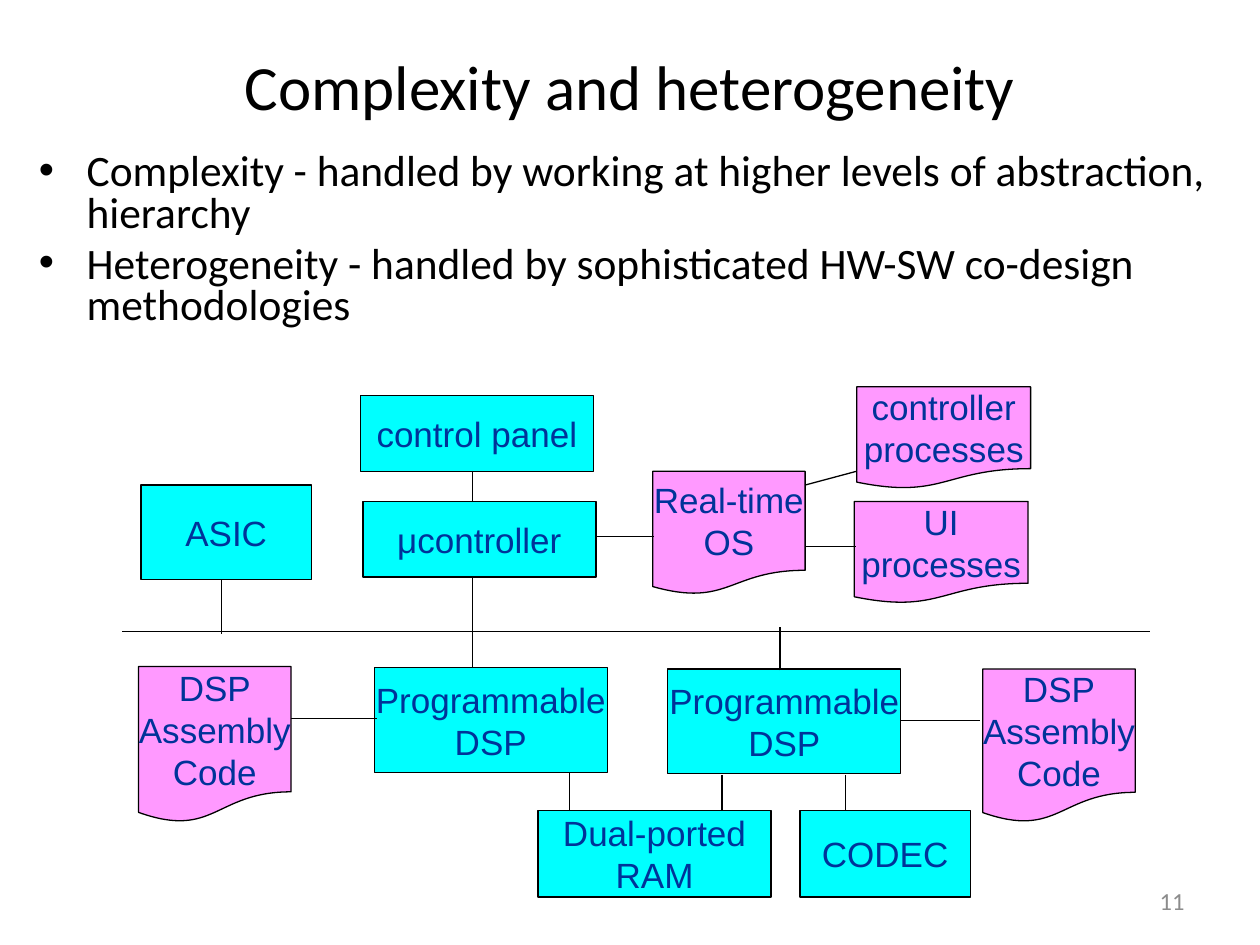
from lxml.etree import SubElement
from pptx import Presentation
from pptx.dml.color import RGBColor
from pptx.enum.shapes import MSO_CONNECTOR as Conn, MSO_SHAPE as Shape
from pptx.enum.text import MSO_ANCHOR as Anchor, PP_ALIGN as Align
from pptx.oxml.ns import qn
from pptx.util import Inches, Pt

BLACK = RGBColor(0x00, 0x00, 0x00)
GRAY = RGBColor(0x8C, 0x8C, 0x8C)
NAVY = RGBColor(0x00, 0x33, 0x99)
CYAN = RGBColor(0x00, 0xFF, 0xFF)
PINK = RGBColor(0xFF, 0x99, 0xFF)

HARD = (Shape.RECTANGLE, CYAN)
SOFT = (Shape.FLOWCHART_DOCUMENT, PINK)

TRUNKS = [(2.78, 0.67, 2.78, 2.25), (0, 1.94, 8.16, 1.94)]
NODES = [
    (HARD, "μcontroller", 1.91, 0.91, 1.85, 0.6),
    (HARD, "control panel", 1.89, 0.07, 1.85, 0.6),
    (SOFT, "Real-time\nOS", 4.21, 0.67, 1.21, 0.98),
    (SOFT, "controller\nprocesses", 5.83, 0, 1.38, 0.81),
    (SOFT, "UI\nprocesses", 5.81, 0.91, 1.38, 0.81),
    (HARD, "ASIC", 0.15, 0.78, 1.35, 0.75),
    (HARD, "Programmable\nDSP", 2, 2.23, 1.85, 0.83),
    (HARD, "Programmable\nDSP", 4.33, 2.24, 1.85, 0.83),
    (SOFT, "DSP\nAssembly\nCode", 0.13, 2.22, 1.21, 1.24),
    (SOFT, "DSP\nAssembly\nCode", 6.83, 2.24, 1.21, 1.22),
    (HARD, "Dual-ported\nRAM", 3.3, 3.36, 1.85, 0.69),
    (HARD, "CODEC", 5.38, 3.36, 1.35, 0.69),
]
LINKS = [
    (0.79, 1.53, 0.79, 1.96),
    (3.55, 3.06, 3.55, 3.37),
    (4.76, 3.08, 4.76, 3.37),
    (5.74, 3.08, 5.74, 3.37),
    (5.22, 2.25, 5.22, 1.91),
    (3.76, 1.19, 4.22, 1.19),
    (5.42, 0.78, 5.83, 0.67),
    (5.43, 1.27, 5.82, 1.27),
    (6.18, 2.65, 6.81, 2.65),
    (1.34, 2.63, 2.02, 2.63),
]


def style(frame, font, size, color, align):
    """Set one font and alignment on every paragraph of a frame."""
    for para in frame.paragraphs:
        para.alignment = align
        para.font.name = font
        para.font.size = Pt(size)
        para.font.color.rgb = color


def add_text(slide, box, text, size, color, align, anchor=Anchor.TOP):
    """Add a wrapped Calibri text box and return its frame."""
    frame = slide.shapes.add_textbox(*map(Inches, box)).text_frame
    frame.word_wrap = True
    frame.vertical_anchor = anchor
    frame.text = text
    style(frame, "Calibri", size, color, align)
    return frame


def add_title(slide, box):
    """Add the slide title."""
    frame = add_text(slide, box, "Complexity and heterogeneity", 36, BLACK, Align.CENTER)
    frame.margin_top = Inches(0.08)


def add_points(slide, box):
    """Add the two bullet points."""
    text = (
        "Complexity - handled by working at higher levels of abstraction, hierarchy\n"
        "Heterogeneity - handled by sophisticated HW-SW co-design methodologies"
    )
    frame = add_text(slide, box, text, 24.8, BLACK, Align.LEFT)
    for para in frame.paragraphs:
        para.line_spacing = 0.8
        para.space_before = Pt(5)
        props = para._p.get_or_add_pPr()
        props.set("marL", str(Inches(0.38)))
        props.set("indent", str(Inches(-0.38)))
        font = SubElement(props, qn("a:buFont"), typeface="Arial")
        font.addnext(props.makeelement(qn("a:buChar"), {"char": "•"}))
        props.append(props.find(qn("a:defRPr")))


def add_wire(slide, left, top, ends):
    """Draw a thin line between two points offset from a corner."""
    x1, y1, x2, y2 = ends
    spots = map(Inches, (left + x1, top + y1, left + x2, top + y2))
    wire = slide.shapes.add_connector(Conn.STRAIGHT, *spots)
    wire.line.color.rgb = BLACK
    wire.line.width = Pt(0.75)
    SubElement(wire._element.spPr, qn("a:effectLst"))


def add_node(slide, kind, text, box):
    """Draw one hardware or software block."""
    form, fill = kind
    node = slide.shapes.add_shape(form, *map(Inches, box))
    node.shadow.inherit = False
    node.fill.solid()
    node.fill.fore_color.rgb = fill
    node.line.color.rgb = BLACK
    node.line.width = Pt(0.75)
    frame = node.text_frame
    frame.margin_left = frame.margin_right = 0
    frame.margin_top = frame.margin_bottom = 0
    frame.word_wrap = False
    frame.vertical_anchor = Anchor.MIDDLE
    frame.text = text
    style(frame, "Arial", 20, NAVY, Align.CENTER)


def add_diagram(slide, left, top):
    """Draw the system diagram from its top left corner."""
    for ends in TRUNKS:
        add_wire(slide, left, top, ends)
    for kind, text, x, y, width, height in NODES:
        add_node(slide, kind, text, (left + x, top + y, width, height))
    for ends in LINKS:
        add_wire(slide, left, top, ends)


def main():
    """Build and save the slide."""
    deck = Presentation()
    deck.slide_width, deck.slide_height = Inches(10), Inches(7.5)
    slide = deck.slides.add_slide(deck.slide_layouts[6])
    add_text(slide, (7.17, 6.95, 2.33, 0.4), "11", 14, GRAY, Align.RIGHT, Anchor.MIDDLE)
    add_title(slide, (0.5, 0.3, 9, 0.53))
    add_diagram(slide, 0.97, 3.07)
    add_points(slide, (0.21, 1.17, 9.54, 1.62))
    deck.save("out.pptx")


if __name__ == "__main__":
    main()
